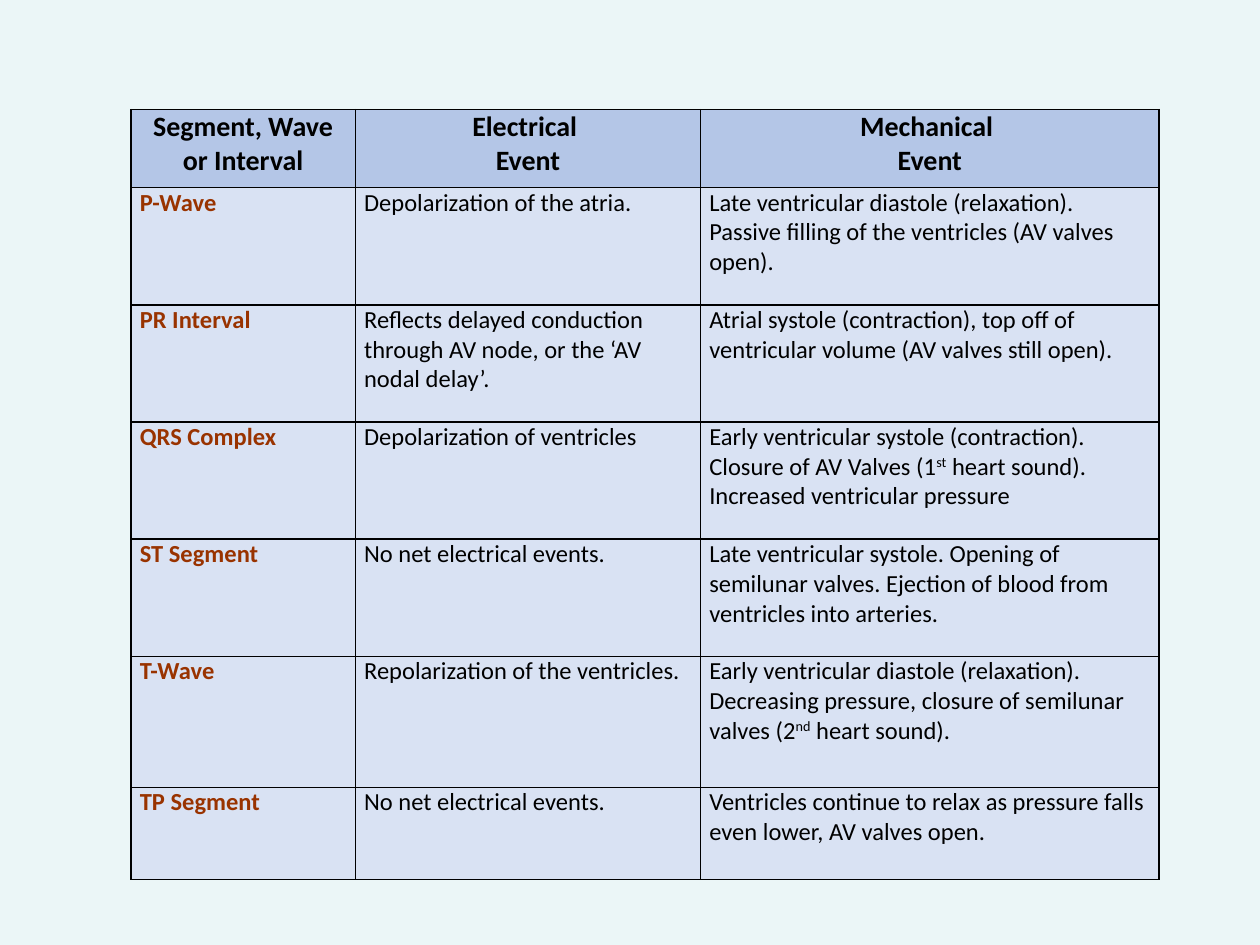
from lxml import etree
from pptx import Presentation
from pptx.dml.color import RGBColor
from pptx.enum.text import PP_ALIGN as Align
from pptx.oxml.ns import qn
from pptx.util import Inches, Pt

COLUMN_WIDTHS = [1.78, 2.74, 3.64]
ROW_HEIGHTS = [0.62, 0.93, 0.93, 0.93, 0.93, 1.04, 0.73]
HEADERS = [["Segment, Wave or Interval"], ["Electrical ", "Event"], ["Mechanical ", "Event"]]
EVENTS = [
    ("P-Wave", "Depolarization of the atria.",
     ["Late ventricular diastole (relaxation). Passive filling of the ventricles (AV valves open)."]),
    ("PR Interval", "Reflects delayed conduction through AV node, or the ‘AV nodal delay’.",
     ["Atrial systole (contraction), top off of ventricular volume (AV valves still open)."]),
    ("QRS Complex", "Depolarization of ventricles",
     ["Early ventricular systole (contraction). Closure of AV Valves (1", "st",
      " heart sound). Increased ventricular pressure"]),
    ("ST Segment", "No net electrical events.",
     ["Late ventricular systole. Opening of semilunar valves. "
      "Ejection of blood from ventricles into arteries."]),
    ("T-Wave", "Repolarization of the ventricles.",
     ["Early ventricular diastole (relaxation). Decreasing pressure, closure of semilunar valves (2",
      "nd", " heart sound)."]),
    ("TP Segment", "No net electrical events.",
     ["Ventricles continue to relax as pressure falls even lower, AV valves open."]),
]


def color(value):
    return RGBColor.from_string(value)


def add_run(paragraph, text, size, text_color, bold, superscript=False):
    run = paragraph.add_run()
    run.text = text
    font = run.font
    font.name = "Calibri"
    font.size = Pt(size)
    font.bold = bold
    font.color.rgb = color(text_color)
    if superscript:
        run._r.get_or_add_rPr().set("baseline", "30000")


def add_border(cell):
    properties = cell._tc.get_or_add_tcPr()
    for position, side in enumerate(("lnL", "lnR", "lnT", "lnB")):
        line = etree.Element(qn(f"a:{side}"), w=str(Pt(1)))
        fill = etree.SubElement(line, qn("a:solidFill"))
        etree.SubElement(fill, qn("a:srgbClr"), val="000000")
        properties.insert(position, line)


def style_cell(cell, fill_color):
    cell.fill.solid()
    cell.fill.fore_color.rgb = color(fill_color)
    cell.margin_left = cell.margin_right = Inches(0.07)
    cell.margin_top = cell.margin_bottom = 0
    add_border(cell)


def fill_header(cell, lines):
    style_cell(cell, "B4C6E7")
    frame = cell.text_frame
    for index, line in enumerate(lines):
        paragraph = frame.add_paragraph() if index else frame.paragraphs[0]
        paragraph.alignment = Align.CENTER
        add_run(paragraph, line, 16, "000000", True)


def fill_body(cell, parts, text_color="000000", bold=False, alignment=Align.LEFT):
    style_cell(cell, "D9E2F3")
    paragraph = cell.text_frame.paragraphs[0]
    paragraph.alignment = alignment
    paragraph.space_after = Pt(6)
    for index, part in enumerate(parts):
        add_run(paragraph, part, 14, text_color, bold, superscript=index % 2 == 1)


def add_event_table(slide, left, top, width, height):
    table = slide.shapes.add_table(len(ROW_HEIGHTS), len(COLUMN_WIDTHS),
                                   left, top, width, height).table
    for column, column_width in zip(table.columns, COLUMN_WIDTHS):
        column.width = Inches(column_width)
    for row, row_height in zip(table.rows, ROW_HEIGHTS):
        row.height = Inches(row_height)
    for index, lines in enumerate(HEADERS):
        fill_header(table.cell(0, index), lines)
    for index, (segment, electrical, mechanical) in enumerate(EVENTS, start=1):
        fill_body(table.cell(index, 0), [segment], "993300", True, Align.JUSTIFY)
        fill_body(table.cell(index, 1), [electrical])
        fill_body(table.cell(index, 2), mechanical)


def main():
    presentation = Presentation()
    presentation.slide_width = Inches(10)
    presentation.slide_height = Inches(7.5)
    slide = presentation.slides.add_slide(presentation.slide_layouts[6])
    background = slide.background.fill
    background.solid()
    background.fore_color.rgb = color("EBF6F7")
    add_event_table(slide, Inches(1.04), Inches(0.87),
                    Inches(sum(COLUMN_WIDTHS)), Inches(sum(ROW_HEIGHTS)))
    presentation.save("out.pptx")


if __name__ == "__main__":
    main()
